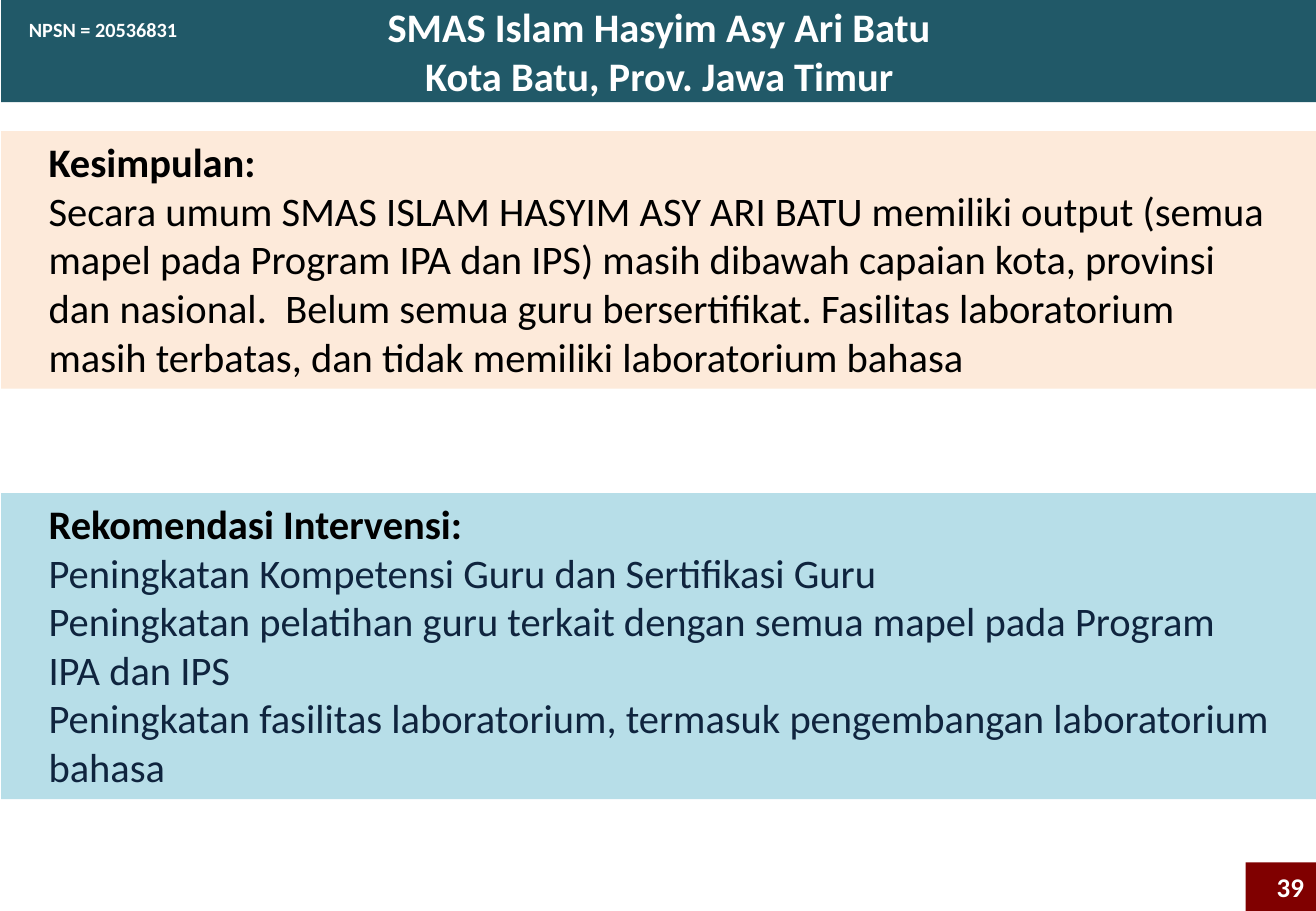
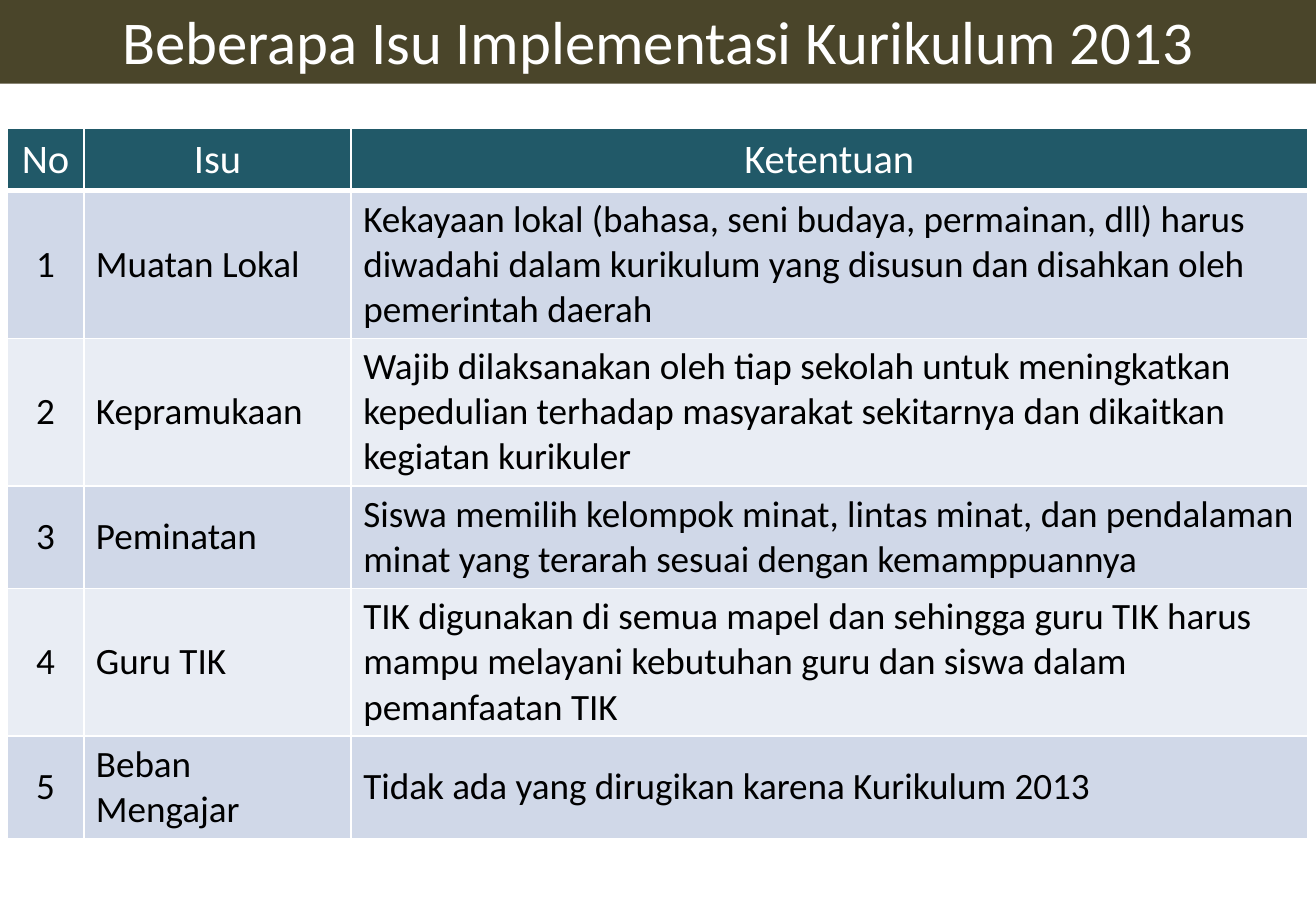
"""Build two slides: a school's conclusions and a table of curriculum issues."""
from lxml import etree
from pptx import Presentation
from pptx.dml.color import RGBColor
from pptx.enum.shapes import MSO_SHAPE
from pptx.enum.text import MSO_ANCHOR, MSO_AUTO_SIZE, PP_ALIGN
from pptx.oxml.ns import qn
from pptx.util import Inches, Pt

LEFT, CENTER, RIGHT = PP_ALIGN.LEFT, PP_ALIGN.CENTER, PP_ALIGN.RIGHT
TOP, MIDDLE = MSO_ANCHOR.TOP, MSO_ANCHOR.MIDDLE
RECTANGLE = MSO_SHAPE.RECTANGLE
NO_AUTOFIT = MSO_AUTO_SIZE.NONE

FONT = "Calibri"
WIDTH, HEIGHT = 10.83, 7.5
TITLE_ONLY = 5
WHITE, BLACK, NAVY = "FFFFFF", "000000", "0F243E"
TEAL, OLIVE, MAROON = "215968", "4A452A", "800000"
PEACH, SKY = "FDEADA", "B7DEE8"
ROW_FILLS = ("D0D8E8", "E9EDF4")

SCHOOL = ["SMAS Islam Hasyim Asy Ari Batu", "Kota Batu, Prov. Jawa Timur"]
SCHOOL_CODE = "NPSN = 20536831"
PAGE_NUMBER = "39"
SECTIONS = [
    {
        "top": 1.08, "height": 2.12, "fill": PEACH, "color": BLACK,
        "lines": [
            "Kesimpulan:",
            "Secara umum SMAS ISLAM HASYIM ASY ARI BATU memiliki output (semua mapel pada "
            "Program IPA dan IPS) masih dibawah capaian kota, provinsi dan nasional.  Belum "
            "semua guru bersertifikat. Fasilitas laboratorium masih terbatas, dan tidak "
            "memiliki laboratorium bahasa",
        ],
    },
    {
        "top": 4.06, "height": 2.52, "fill": SKY, "color": NAVY,
        "lines": [
            "Rekomendasi Intervensi:",
            "Peningkatan Kompetensi Guru dan Sertifikasi Guru",
            "Peningkatan pelatihan guru terkait dengan semua mapel pada Program IPA dan IPS",
            "Peningkatan fasilitas laboratorium, termasuk pengembangan laboratorium bahasa",
        ],
    },
]

ISSUES_TITLE = ["Beberapa Isu Implementasi Kurikulum 2013"]
ISSUES_HEADER = ("No", "Isu", "Ketentuan")
ISSUES = [
    ("Muatan Lokal",
     "Kekayaan lokal (bahasa, seni budaya, permainan, dll) harus diwadahi dalam kurikulum "
     "yang disusun dan disahkan oleh pemerintah daerah"),
    ("Kepramukaan",
     "Wajib dilaksanakan oleh tiap sekolah untuk meningkatkan kepedulian terhadap "
     "masyarakat sekitarnya dan dikaitkan kegiatan kurikuler"),
    ("Peminatan",
     "Siswa memilih kelompok minat, lintas minat, dan pendalaman minat yang terarah sesuai "
     "dengan kemamppuannya"),
    ("Guru TIK",
     "TIK digunakan di semua mapel dan sehingga guru TIK harus mampu melayani kebutuhan "
     "guru dan siswa dalam pemanfaatan TIK"),
    ("Beban Mengajar", "Tidak ada yang dirugikan karena Kurikulum 2013"),
]
COLUMN_WIDTHS = (0.63, 2.2, 7.87)
ROW_HEIGHTS = (0.51, 1.21, 1.21, 0.84, 1.21, 0.84)


def rgb(value):
    return RGBColor.from_string(value)


def paint(target, color):
    target.fill.solid()
    target.fill.fore_color.rgb = rgb(color)


def format_para(para, size, color, bold=False, align=LEFT):
    para.alignment = align
    for span in para.runs:
        span.font.name = FONT
        span.font.size = Pt(size)
        span.font.bold = bold
        span.font.color.rgb = rgb(color)


def write(box, lines, size, color=WHITE, bold=False, align=LEFT, anchor=MIDDLE):
    frame = box.text_frame
    frame.text = "\n".join(lines)
    frame.word_wrap = True
    frame.vertical_anchor = anchor
    for para in frame.paragraphs:
        format_para(para, size, color, bold, align)


def add_box(page, left, top, width, height, fill):
    box = page.shapes.add_shape(
        RECTANGLE, Inches(left), Inches(top), Inches(width), Inches(height))
    box.shadow.inherit = False
    box.line.fill.background()
    paint(box, fill)
    return box


def add_page(deck, title_lines, left, top, height, fill, size, bold):
    page = deck.slides.add_slide(deck.slide_layouts[TITLE_ONLY])
    title = page.shapes.title
    title.left, title.top = Inches(left), Inches(top)
    title.width, title.height = Inches(WIDTH), Inches(height)
    paint(title, fill)
    write(title, title_lines, size, bold=bold, align=CENTER)
    title.text_frame.auto_size = NO_AUTOFIT
    return page


def add_section(page, section):
    box = add_box(page, 0.01, section["top"], WIDTH, section["height"], section["fill"])
    write(box, section["lines"], 24, section["color"], anchor=TOP)
    box.text_frame.margin_left = box.text_frame.margin_right = Inches(0.39)
    format_para(box.text_frame.paragraphs[0], 24, BLACK, bold=True)


def add_borders(cell, bottom):
    properties = cell._tc.get_or_add_tcPr()
    for side, points in (("lnL", 1), ("lnR", 1), ("lnT", 1), ("lnB", bottom)):
        line = etree.SubElement(properties, qn(f"a:{side}"), w=str(Pt(points)))
        fill = etree.SubElement(line, qn("a:solidFill"))
        etree.SubElement(fill, qn("a:srgbClr"), val=WHITE)


def add_issue_table(page):
    rows = [ISSUES_HEADER]
    rows += [(str(number), *issue) for number, issue in enumerate(ISSUES, 1)]
    table = page.shapes.add_table(
        len(rows), len(ISSUES_HEADER), Inches(0.06), Inches(1.06),
        Inches(sum(COLUMN_WIDTHS)), Inches(sum(ROW_HEIGHTS))).table
    for column, width in zip(table.columns, COLUMN_WIDTHS):
        column.width = Inches(width)
    for row, height in zip(table.rows, ROW_HEIGHTS):
        row.height = Inches(height)
    for row_index, texts in enumerate(rows):
        header = row_index == 0
        for column_index, text in enumerate(texts):
            cell = table.cell(row_index, column_index)
            cell.text = text
            cell.vertical_anchor = MIDDLE
            add_borders(cell, 3 if header else 1)
            paint(cell, TEAL if header else ROW_FILLS[(row_index - 1) % 2])
            format_para(
                cell.text_frame.paragraphs[0], 24 if header else 22,
                WHITE if header else BLACK,
                align=CENTER if header or column_index == 0 else LEFT)


def build_school_page(deck):
    page = add_page(deck, SCHOOL, 0.01, 0, 0.84, TEAL, 24, True)
    for section in SECTIONS:
        add_section(page, section)
    number = add_box(page, 10.25, 7.1, 0.58, 0.4, MAROON)
    write(number, [PAGE_NUMBER], 16, bold=True, align=RIGHT)
    code = page.shapes.add_textbox(Inches(0.14), Inches(0.09), Inches(1.44), Inches(0.3))
    write(code, [SCHOOL_CODE], 12, bold=True, anchor=TOP)
    code.text_frame.word_wrap = False


def build_issues_page(deck):
    page = add_page(deck, ISSUES_TITLE, 0, -0.02, 0.71, OLIVE, 36, False)
    add_issue_table(page)


def main():
    deck = Presentation()
    deck.slide_width, deck.slide_height = Inches(WIDTH), Inches(HEIGHT)
    build_school_page(deck)
    build_issues_page(deck)
    deck.save("out.pptx")


if __name__ == "__main__":
    main()
